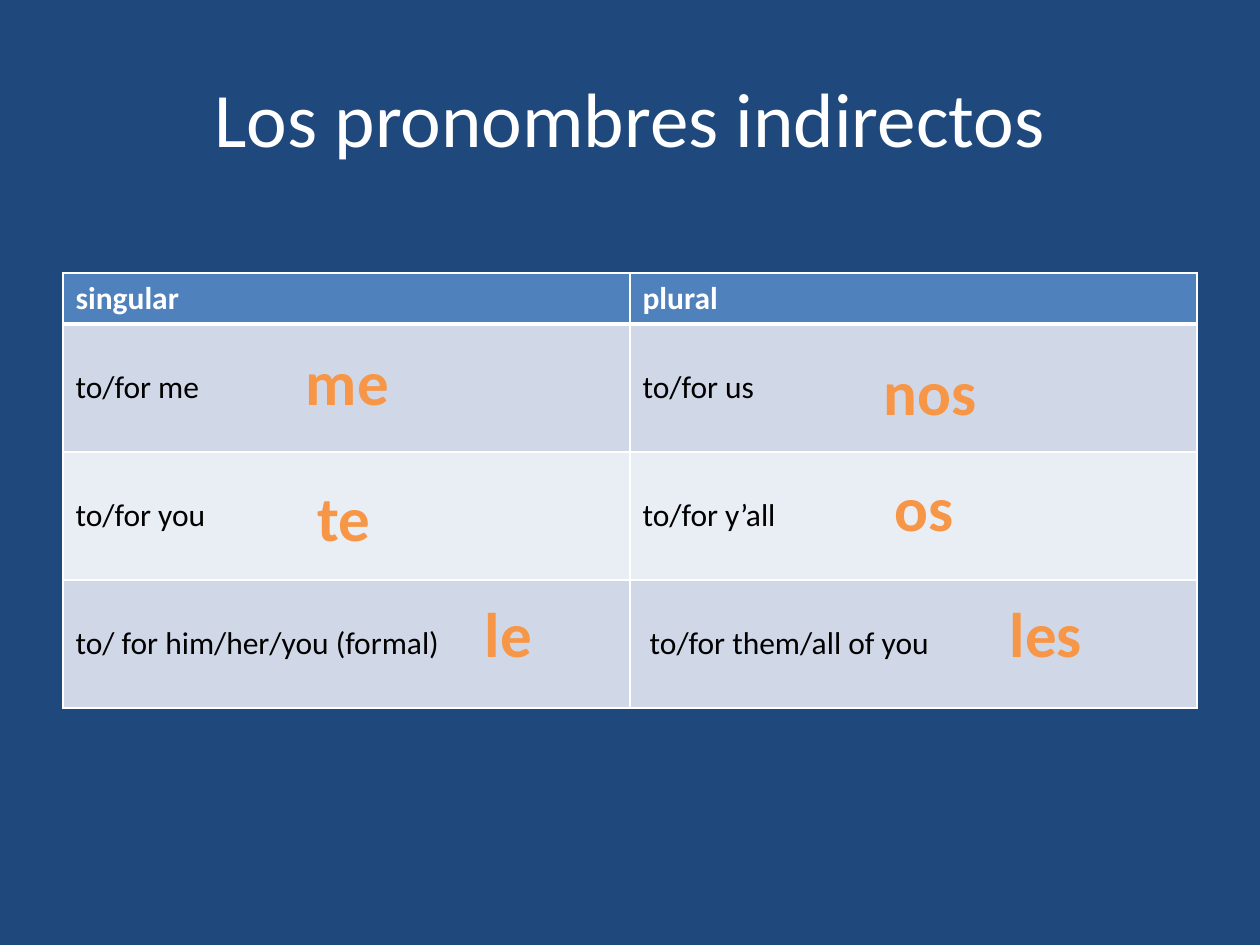
from lxml import etree
from pptx import Presentation
from pptx.dml.color import RGBColor
from pptx.enum import text as t
from pptx.oxml.ns import qn
from pptx.util import Pt

WHITE, BLACK, NAVY, BLUE, ORANGE = "FFFFFF", "000000", "1F497D", "4F81BD", "F79646"
BANDS = ["D0D8E8", "E9EDF4"]
ROWS = [
    ("singular", "plural"),
    ("to/for me", "to/for us"),
    ("to/for you", "to/for y’all"),
    ("to/ for him/her/you (formal)", " to/for them/all of you"),
]
HEAD, BODY = 29.2, 73.15
PRONOUNS = [
    ("me", 131.75, 36, 62.5),
    ("te", 138.25, 114, 44.5),
    ("le", 234, 180, 42),
    ("nos", 462, 42, 68.5),
    ("os", 468, 108, 49),
    ("les", 534, 180, 56),
]


def paint(fill, color):
    fill.solid()
    fill.fore_color.rgb = RGBColor.from_string(color)


def write(frame, words, size=18, color=BLACK, bold=False, align=t.PP_ALIGN.LEFT):
    para = frame.paragraphs[0]
    para.alignment = align
    run = para.add_run()
    run.text = words
    font = run.font
    font.name, font.size, font.bold = "Calibri", Pt(size), bold
    font.color.rgb = RGBColor.from_string(color)


def edge(cell, side, width):
    line = etree.SubElement(cell._tc.get_or_add_tcPr(), qn(f"a:ln{side}"), w=str(Pt(width)))
    fill = etree.SubElement(line, qn("a:solidFill"))
    etree.SubElement(fill, qn("a:srgbClr"), val=WHITE)


def add_title(slide, left, top, width, height):
    title = slide.shapes.title
    title.left, title.top, title.width, title.height = map(Pt, (left, top, width, height))
    title.text_frame.vertical_anchor = t.MSO_ANCHOR.MIDDLE
    write(title.text_frame, "Los pronombres indirectos", size=44, color=WHITE,
          align=t.PP_ALIGN.CENTER)


def add_grid(slide, left, top, width):
    height = HEAD + BODY * (len(ROWS) - 1)
    box = map(Pt, (left, top, width, height))
    table = slide.shapes.add_table(len(ROWS), 2, *box).table
    for r, row in enumerate(ROWS):
        head = r == 0
        table.rows[r].height = Pt(HEAD if head else BODY)
        for c, words in enumerate(row):
            cell = table.cell(r, c)
            for side in "LRTB":
                thick = (r, side) in ((0, "B"), (1, "T"))
                edge(cell, side, 3 if thick else 1)
            paint(cell.fill, BLUE if head else BANDS[(r - 1) % 2])
            cell.vertical_anchor = t.MSO_ANCHOR.TOP if head else t.MSO_ANCHOR.MIDDLE
            write(cell.text_frame, words, color=WHITE if head else BLACK, bold=head)


def add_pronouns(slide, left, top):
    for words, x, y, width in PRONOUNS:
        box = slide.shapes.add_textbox(Pt(left + x), Pt(top + y), Pt(width), Pt(51))
        frame = box.text_frame
        frame.word_wrap = False
        frame.auto_size = t.MSO_AUTO_SIZE.SHAPE_TO_FIT_TEXT
        write(frame, words, size=36, color=ORANGE, bold=True)


def main():
    deck = Presentation()
    deck.slide_width, deck.slide_height = Pt(720), Pt(540)
    slide = deck.slides.add_slide(deck.slide_layouts[5])
    paint(slide.background.fill, NAVY)
    add_title(slide, 36, 21.6, 648, 90)
    add_grid(slide, 36, 156, 648)
    add_pronouns(slide, 36, 156)
    deck.save("out.pptx")


if __name__ == "__main__":
    main()
